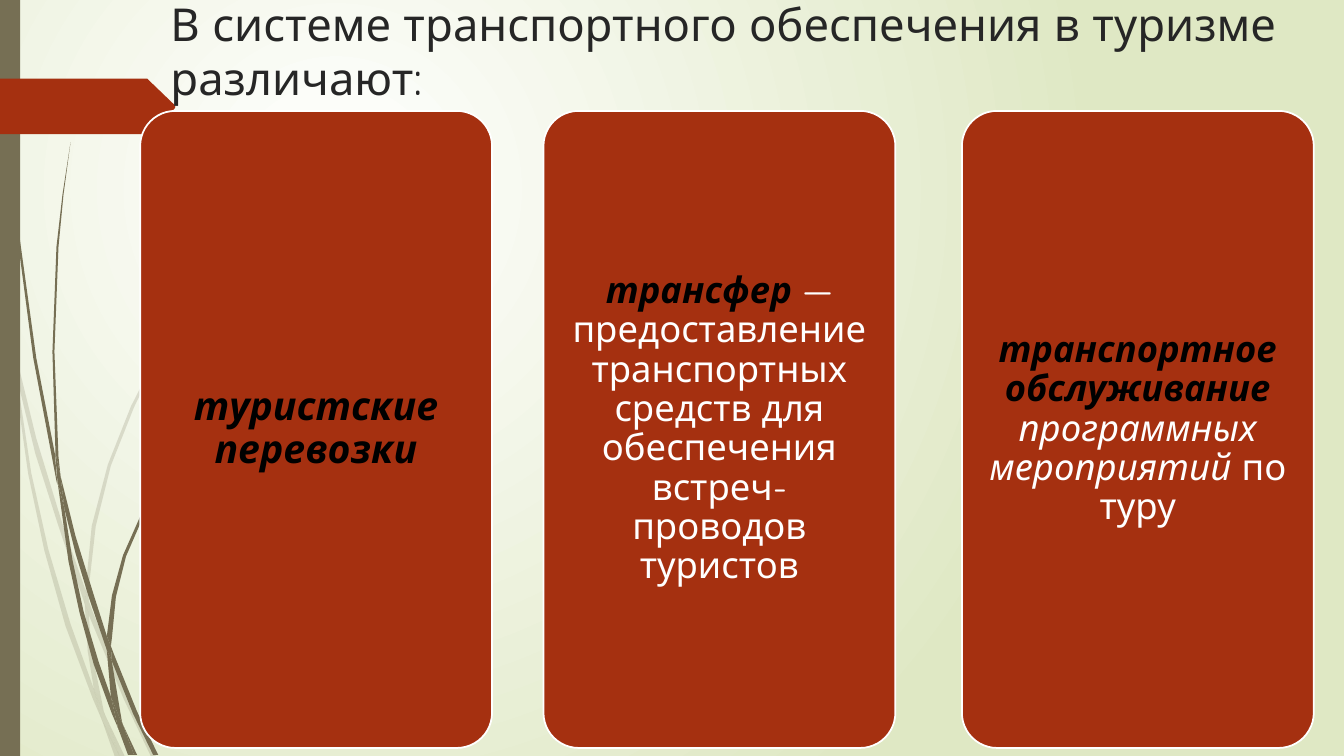
import dataclasses

import lxml.etree
import pptx
import pptx.dml.color
import pptx.enum.shapes
import pptx.enum.text
import pptx.oxml.ns
import pptx.util

Inches = pptx.util.Inches
qn = pptx.oxml.ns.qn


@dataclasses.dataclass(frozen=True)
class Theme:
    font: str = "Quicksand"
    accent: str = "A53010"
    grass: str = "766F54"
    white: str = "FFFFFF"
    meadow: str = "DFE8C4"
    title_color: str = "262626"
    term_color: str = "000000"
    title_size: float = 32.4
    short_size: float = 28
    long_size: float = 26
    card_line_spacing: float = 0.9


THEME = Theme()
SLIDE_WIDTH, SLIDE_HEIGHT = 13.33, 7.5

# Each blade of grass is an outline of (x, y) corners in inches.
PALE_BLADES = [
    [(.11, 3.5), (.09, 3.22), (0, 2.82), (0, 2.99), (.1, 3.44)],
    [(.58, 5.22), (.84, 5.99), (.85, 5.86), (.62, 5.2), (.36, 4.35), (.14, 3.45),
     (.17, 3.76), (.35, 4.5)],
    [(.92, 6.07), (.88, 5.96), (.88, 6.1), (1.23, 6.94), (1.5, 7.51), (1.55, 7.51),
     (1.27, 6.92)],
    [(1.19, 7.51), (1.24, 7.51), (1.05, 7.11)],
    [(.93, 6.83), (.7, 6.19), (.48, 5.45), (.31, 4.69), (.17, 3.76), (.11, 3.5),
     (.28, 4.7), (.44, 5.46), (.65, 6.21), (.92, 6.93), (1.01, 7.14), (.99, 7.07)],
    [(.84, 5.99), (.87, 6.46), (.93, 6.83), (.96, 6.92), (1.05, 7.11), (1.03, 7.06),
     (.91, 6.46), (.88, 6.1), (.88, 6.08)],
    [(.88, 5.84), (.95, 5.22), (1.1, 4.62), (1.33, 4.04), (1.6, 3.49), (2.29, 2.45),
     (2.68, 1.98), (3.12, 1.54), (3.12, 1.53), (2.68, 1.97), (2.28, 2.44),
     (1.58, 3.48), (1.3, 4.03), (1.07, 4.61), (.91, 5.22), (.85, 5.84), (.85, 5.86),
     (.88, 5.96)],
    [(1.01, 7.14), (1.14, 7.51), (1.19, 7.51)],
    [(.88, 6.08), (.88, 6.1), (.88, 5.96), (.85, 5.86), (.84, 5.99)],
    [(.96, 6.92), (.93, 6.83), (.99, 7.07), (1.01, 7.14), (1.19, 7.51), (1.05, 7.11)],
]
DARK_BLADES = [
    [(.07, 1.1), (.17, 2.33), (.33, 3.55), (.56, 4.77), (.57, 4.81), (.55, 4.57),
     (.55, 4.53), (.36, 3.55), (.19, 2.32), (.08, 1.09), (.05, .48), (.04, 0),
     (.03, 0), (.04, .48)],
    [(.88, 5.92), (1.06, 6.45), (1.06, 6.33), (1.06, 6.31), (.93, 5.9), (.75, 5.32),
     (.6, 4.72), (.64, 5.05), (.75, 5.49)],
    [(1.13, 6.49), (1.1, 6.41), (1.11, 6.56), (1.32, 7.08), (1.52, 7.49),
     (1.57, 7.49), (1.36, 7.06)],
    [(1.1, 6.91), (.98, 6.57), (.83, 6.07), (.72, 5.56), (.64, 5.05), (.57, 4.77),
     (.68, 5.57), (.79, 6.08), (.93, 6.59), (1.11, 7.08), (1.17, 7.22), (1.16, 7.17)],
    [(.6, 4.72), (.58, 4.53), (.54, 3.49), (.58, 2.45), (.63, 1.93), (.7, 1.41),
     (.62, 1.93), (.56, 2.45), (.52, 3.49), (.55, 4.49)],
    [(1.33, 7.49), (1.36, 7.49), (1.22, 7.19)],
    [(.57, 4.77), (.64, 5.05), (.6, 4.72), (.55, 4.49), (.55, 4.53)],
    [(1.11, 6.33), (1.15, 5.92), (1.25, 5.52), (1.58, 4.76), (2.05, 4.06),
     (2.31, 3.74), (2.61, 3.44), (2.31, 3.73), (2.04, 4.05), (1.56, 4.74),
     (1.22, 5.51), (1.11, 5.91), (1.06, 6.31), (1.1, 6.41)],
    [(1.17, 7.22), (1.27, 7.49), (1.31, 7.49)],
    [(1.06, 6.45), (1.1, 6.91), (1.16, 7.06), (1.22, 7.19), (1.21, 7.16),
     (1.11, 6.56), (1.09, 6.51)],
    [(1.06, 6.45), (1.09, 6.51), (1.11, 6.56), (1.1, 6.41), (1.06, 6.31)],
    [(1.16, 7.06), (1.1, 6.91), (1.16, 7.17), (1.17, 7.22), (1.3, 7.49), (1.33, 7.49),
     (1.22, 7.19)],
]

# Each card: left edge, type size, inset and runs of (text, color, bold, italic).
CARDS = [
    (1.39, THEME.short_size, 0.12,
     [("туристские перевозки", THEME.term_color, True, True)]),
    (5.39, THEME.long_size, 0.11,
     [("трансфер ", THEME.term_color, True, True),
      ("— предоставление транспортных средств для обеспечения "
       "встреч-проводов туристов", THEME.white, False, False)]),
    (9.54, THEME.long_size, 0.11,
     [("транспортное обслуживание ", THEME.term_color, True, True),
      ("программных мероприятий ", THEME.white, False, True),
      ("по туру", THEME.white, False, False)]),
]


def rgb(value):
    return pptx.dml.color.RGBColor.from_string(value)


def paint(shape, color, opacity=100):
    """Give the shape a flat fill without line or shadow."""
    shape.shadow.inherit = False
    shape.fill.solid()
    shape.fill.fore_color.rgb = rgb(color)
    shape.line.fill.background()
    if opacity < 100:
        fill_color = shape.element.spPr.find(qn("a:solidFill"))[0]
        alpha = lxml.etree.SubElement(fill_color, qn("a:alpha"))
        alpha.set("val", str(opacity * 1000))


def format_run(run, size, color, bold=False, italic=False):
    run.font.name = THEME.font
    run.font.size = pptx.util.Pt(size)
    run.font.color.rgb = rgb(color)
    run.font.bold = bold
    run.font.italic = italic


def set_insets(text_frame, horizontal, vertical):
    text_frame.margin_left = text_frame.margin_right = Inches(horizontal)
    text_frame.margin_top = text_frame.margin_bottom = Inches(vertical)


def add_outline(slide, points):
    corners = [(round(x * 100), round(y * 100)) for x, y in points]
    builder = slide.shapes.build_freeform(*corners[0], scale=Inches(1) / 100)
    builder.add_line_segments(corners[1:], close=True)
    return builder.convert_to_shape()


def add_background(slide):
    fill = slide.background.fill
    fill.gradient()
    for stop, color in zip(fill.gradient_stops, (THEME.white, THEME.meadow)):
        stop.color.rgb = rgb(color)
    gradient = next(slide.element.iter(qn("a:gradFill")))
    gradient.remove(gradient.find(qn("a:lin")))
    circle = lxml.etree.SubElement(gradient, qn("a:path"), path="circle")
    lxml.etree.SubElement(circle, qn("a:fillToRect"),
                          l="50000", t="50000", r="100000", b="100000")


def add_side_decoration(slide):
    for blades, opacity in ((PALE_BLADES, 20), (DARK_BLADES, 100)):
        for blade in blades:
            paint(add_outline(slide, blade), THEME.grass, opacity)
    stripe = slide.shapes.add_shape(
        pptx.enum.shapes.MSO_SHAPE.RECTANGLE, 0, 0, Inches(0.2), Inches(SLIDE_HEIGHT))
    paint(stripe, THEME.grass)


def add_pointer(slide, left, top, width, height):
    right, bottom, middle = left + width, top + height, top + height / 2
    shoulder = right - height / 2
    paint(add_outline(slide, [
        (left, top), (shoulder, top), (right - 0.01, middle - 0.02),
        (right, middle), (right - 0.01, middle + 0.02),
        (shoulder, bottom), (left, bottom)]), THEME.accent)


def add_title(slide, left, top, width, height):
    title = slide.shapes.title
    slide.shapes.element.append(title.element)  # in front of the decoration
    title.left, title.top = Inches(left), Inches(top)
    title.width, title.height = Inches(width), Inches(height)
    frame = title.text_frame
    frame.text = "В системе транспортного обеспечения в туризме различают:"
    frame.word_wrap = True
    frame.auto_size = pptx.enum.text.MSO_AUTO_SIZE.NONE
    frame.vertical_anchor = pptx.enum.text.MSO_ANCHOR.TOP
    set_insets(frame, 0.1, 0.05)
    paragraph = frame.paragraphs[0]
    paragraph.alignment = pptx.enum.text.PP_ALIGN.LEFT
    paragraph.line_spacing = 1.0
    format_run(paragraph.runs[0], THEME.title_size, THEME.title_color)


def add_card(slide, left, top, width, height, size, inset, runs):
    card = slide.shapes.add_shape(
        pptx.enum.shapes.MSO_SHAPE.ROUNDED_RECTANGLE,
        Inches(left), Inches(top), Inches(width), Inches(height))
    card.adjustments[0] = 0.1
    paint(card, THEME.accent)
    card.line.color.rgb = rgb(THEME.white)
    card.line.width = pptx.util.Pt(1.25)
    frame = card.text_frame
    frame.word_wrap = True
    frame.vertical_anchor = pptx.enum.text.MSO_ANCHOR.MIDDLE
    set_insets(frame, inset, inset)
    paragraph = frame.paragraphs[0]
    paragraph.alignment = pptx.enum.text.PP_ALIGN.CENTER
    paragraph.line_spacing = THEME.card_line_spacing
    for text, color, bold, italic in runs:
        run = paragraph.add_run()
        run.text = text
        format_run(run, size, color, bold, italic)


def main():
    presentation = pptx.Presentation()
    presentation.slide_width = Inches(SLIDE_WIDTH)
    presentation.slide_height = Inches(SLIDE_HEIGHT)
    slide = presentation.slides.add_slide(
        presentation.slide_layouts.get_by_name("Title Only"))
    add_background(slide)
    add_side_decoration(slide)
    add_pointer(slide, 0, 0.78, 1.74, 0.55)
    add_title(slide, 1.59, -0.09, 12.41, 1.4)
    for left, size, inset, runs in CARDS:
        add_card(slide, left, 1.1, 3.49, 6.32, size, inset, runs)
    presentation.save("out.pptx")


if __name__ == "__main__":
    main()
